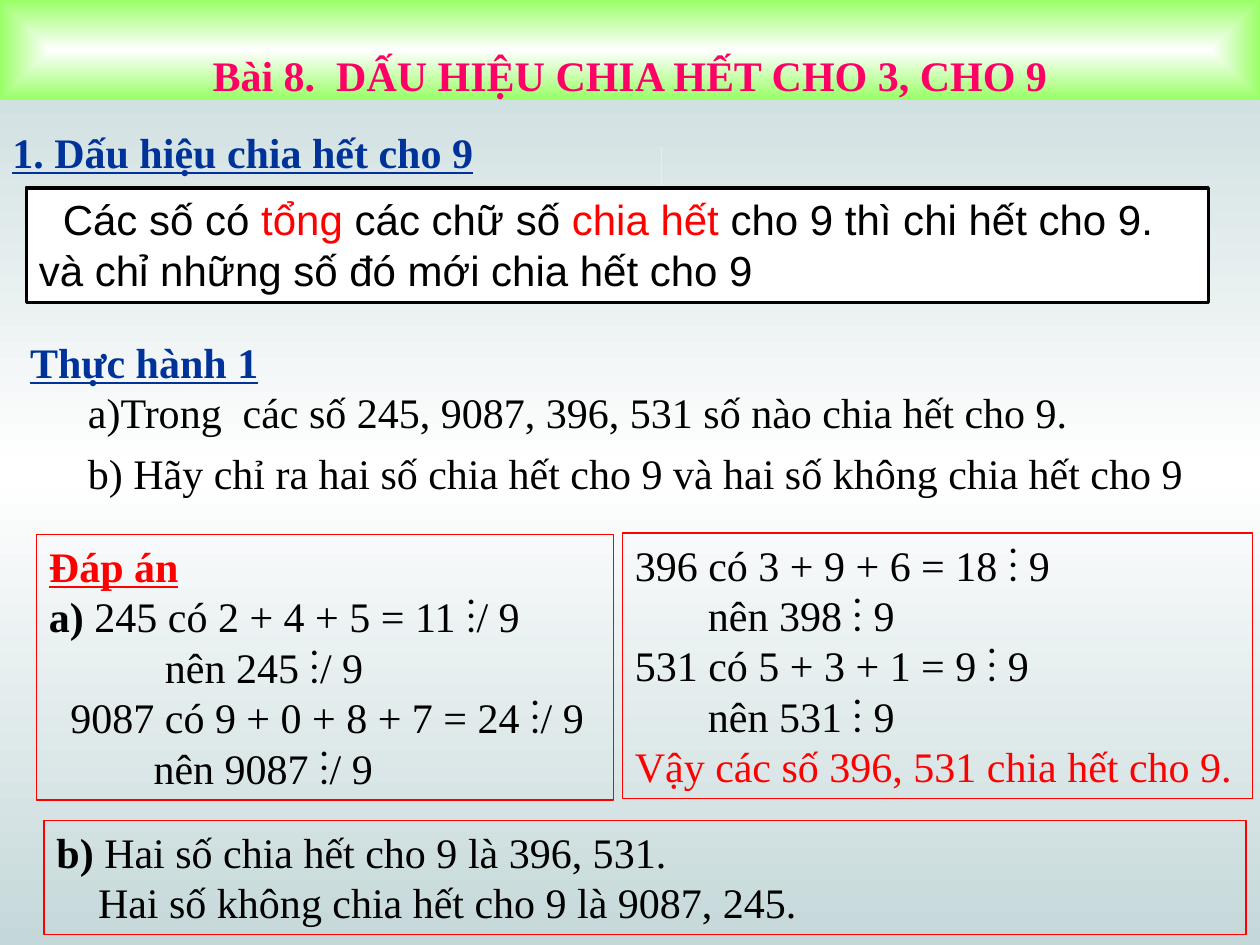
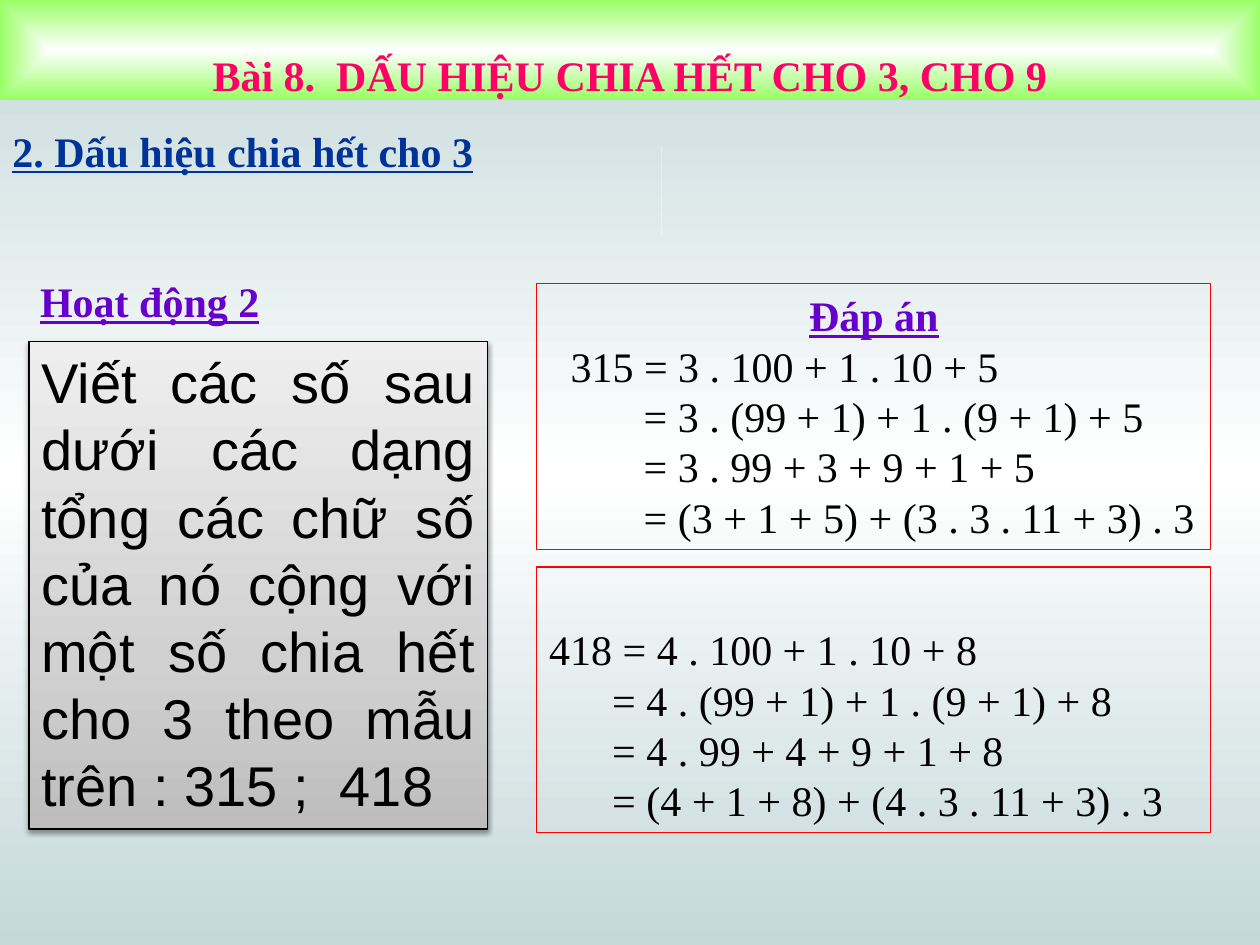
"""Build two lesson slides on divisibility by 9 and by 3."""
from dataclasses import dataclass

from lxml.etree import SubElement
from pptx import Presentation
from pptx.dml.color import RGBColor
from pptx.enum.shapes import MSO_SHAPE
from pptx.enum.text import MSO_ANCHOR, MSO_AUTO_SIZE, PP_ALIGN
from pptx.oxml.ns import qn
from pptx.util import Inches, Pt


@dataclass(frozen=True)
class Theme:
    serif: str = "Times New Roman"
    sans: str = "Arial"
    body: int = 24
    large: int = 32
    black: str = "000000"
    white: str = "FFFFFF"
    red: str = "FF0000"
    blue: str = "003399"
    purple: str = "6600CC"
    pink: str = "FF0066"
    green: str = "99FF66"
    page: tuple = ((0, "C5D8D9"), (50, "FFFFFF"), (100, "C5D8D9"))
    band: tuple = ((0, "FFFFFF"), (100, "99FF66"))
    grey: tuple = ((0, "BDBDBD"), (35, "D1D1D1"), (100, "EEEEEE"))


T = Theme()


@dataclass
class Run:
    text: str
    color: str = T.black
    bold: bool = False
    underline: bool = False


@dataclass
class Para:
    runs: list
    left: float = 0
    first: float = 0
    align: PP_ALIGN = PP_ALIGN.LEFT
    before: float = 0
    line: float = 1.0


def line(text, left=0.0, color=T.black, **kw):
    return Para([Run(text, color)], left, **kw)


def title(text, color, **kw):
    return Para([Run(text, color, True, True)], **kw)


class Deck:
    def __init__(self):
        self.prs = Presentation()
        self.prs.slide_width, self.prs.slide_height = Inches(10), Inches(7.5)
        self.s = None

    def gradient(self, fill, root, stops, angle=None):
        fill.gradient()
        grad = next(root.iter(qn("a:gradFill")))
        for child in list(grad):
            grad.remove(child)
        gs_list = SubElement(grad, qn("a:gsLst"))
        for pos, color in stops:
            gs = SubElement(gs_list, qn("a:gs"), pos=str(pos * 1000))
            SubElement(gs, qn("a:srgbClr"), val=color)
        if angle is None:
            shade = SubElement(grad, qn("a:path"), {"path": "shape"})
            SubElement(shade, qn("a:fillToRect"), dict.fromkeys("ltrb", "50000"))
        else:
            SubElement(grad, qn("a:lin"), ang=str(angle * 60000), scaled="0")

    def paragraphs(self, tf, paras, font=T.serif, size=T.body):
        for i, para in enumerate(paras):
            p = tf.paragraphs[0] if i == 0 else tf.add_paragraph()
            p.alignment, p.line_spacing = para.align, para.line
            p.space_before = Pt(para.before)
            pPr = p._p.get_or_add_pPr()
            pPr.set("marL", str(Inches(para.left)))
            pPr.set("indent", str(Inches(para.first)))
            for run in para.runs:
                r = p.add_run()
                r.text = run.text
                r.font.name, r.font.size = font, Pt(size)
                r.font.bold, r.font.underline = run.bold, run.underline
                r.font.color.rgb = RGBColor.from_string(run.color)

    def text(self, at, paras, wrap=False):
        sp = self.s.shapes.add_textbox(*map(Inches, at))
        sp.text_frame.word_wrap = wrap
        self.paragraphs(sp.text_frame, paras)

    def rect(self, at, fill=None, border=None, width=0.75):
        sp = self.s.shapes.add_shape(MSO_SHAPE.RECTANGLE, *map(Inches, at))
        sp.shadow.inherit = False
        if fill:
            sp.fill.solid()
            sp.fill.fore_color.rgb = RGBColor.from_string(fill)
        else:
            sp.fill.background()
        if border:
            sp.line.color.rgb = RGBColor.from_string(border)
            sp.line.width = Pt(width)
        else:
            sp.line.fill.background()
        return sp

    def box(self, at, paras, fill=None, border=T.red, width=0.75, top=0.05, **style):
        sp = self.rect(at, fill, border, width)
        tf = sp.text_frame
        tf.word_wrap, tf.auto_size = True, MSO_AUTO_SIZE.SHAPE_TO_FIT_TEXT
        tf.vertical_anchor, tf.margin_top = MSO_ANCHOR.TOP, Inches(top)
        self.paragraphs(tf, paras, **style)
        return sp

    def task(self, at, text):
        para = line(text, align=PP_ALIGN.JUSTIFY)
        sp = self.box(at, [para], border=T.black, font=T.sans, size=T.large)
        self.gradient(sp.fill, sp._element, T.grey, 270)
        effects = sp._element.spPr.find(qn("a:effectLst"))
        shadow = SubElement(effects, qn("a:outerShdw"), blurRad=str(Pt(3.1)),
                            dist=str(Pt(1.6)), dir="5400000", rotWithShape="0")
        color = SubElement(shadow, qn("a:srgbClr"), val=T.black)
        SubElement(color, qn("a:alpha"), val="38000")

    def slide(self, heading, top):
        self.s = self.prs.slides.add_slide(self.prs.slide_layouts[6])
        self.gradient(self.s.background.fill, self.s._element, T.page, 90)
        sp = self.rect((0, 0, 10, 0.79), border=T.green)
        self.gradient(sp.fill, sp._element, T.band)
        tf = sp.text_frame
        tf.word_wrap, tf.vertical_anchor = False, MSO_ANCHOR.BOTTOM
        tf.margin_bottom = 0
        lesson = Run("Bài 8.  DẤU HIỆU CHIA HẾT CHO 3, CHO 9", T.pink, True)
        self.paragraphs(tf, [Para([lesson], align=PP_ALIGN.CENTER)])
        for hairline in ((5.25, 1.17, 0, 0.7), (5, 3.6, 0, 0.3)):
            self.rect(hairline, T.white)
        self.text((0, top, 4.5, 0.5), [title(heading, T.blue, left=0.67, first=-0.67,
                                            before=4.8, line=0.9)], wrap=True)


def divisible_by_9(d):
    d.slide("1. Dấu hiệu chia hết cho 9", 1)
    rule = [Run("Các số có "), Run("tổng ", T.red), Run("các chữ số "),
            Run("chia hết ", T.red),
            Run("cho 9 thì chi hết cho 9. và chỉ những số đó mới chia hết cho 9")]
    d.box((0.21, 1.49, 9.38, 0.91), [Para(rule, first=0.19)], T.white, T.black, 2,
          font=T.sans)
    d.text((0.14, 2.62, 2.08, 0.5), [title("Thực hành 1", T.blue)])
    questions = ("a)Trong  các số 245, 9087, 396, 531 số nào chia hết cho 9.",
                 "b) Hãy chỉ ra hai số chia hết cho 9 và hai số không chia hết cho 9")
    d.text((0.6, 3.02, 8.97, 0.99),
           [line(q, align=PP_ALIGN.JUSTIFY, before=6) for q in questions])
    d.box((0.29, 4.24, 4.58, 2.11), [
        title("Đáp án", T.red),
        Para([Run("a)", bold=True), Run(" 245 có 2 + 4 + 5 = 11 ⋮/ 9")]),
        line("nên 245 ⋮/ 9", 0.92),
        line("9087 có 9 + 0 + 8 + 7 = 24 ⋮/ 9", 0.17),
        line("nên 9087 ⋮/ 9", 0.83)])
    d.box((4.94, 4.23, 5, 2.11), [
        line("396 có 3 + 9 + 6 = 18 ⋮ 9"),
        line("nên 398 ⋮ 9", 0.58),
        line("531 có 5 + 3 + 1 = 9 ⋮ 9"),
        line("nên 531 ⋮ 9", 0.58),
        line("Vậy các số 396, 531 chia hết cho 9.", color=T.red)])
    d.box((0.35, 6.51, 9.54, 0.91), [
        Para([Run("b) ", bold=True), Run("Hai số chia hết cho 9 là 396, 531.")]),
        line("Hai số không chia hết cho 9 là 9087, 245.", 0.33)])


def divisible_by_3(d):
    d.slide("2. Dấu hiệu chia hết cho 3", 0.99)
    d.text((0.22, 2.14, 1.94, 0.5), [title("Hoạt động 2", T.purple)])
    d.task((0.23, 2.71, 3.64, 3.87),
           "Viết các số sau dưới các dạng tổng các chữ số của nó cộng với "
           "một số chia hết cho 3 theo mẫu trên : 315 ;  418")
    d.box((4.26, 2.25, 5.35, 2.11), [
        title("Đáp án", T.purple, align=PP_ALIGN.CENTER),
        line("315 = 3 . 100 + 1 . 10 + 5", 0.17),
        *(line(step, 0.75) for step in ("= 3 . (99 + 1) + 1 . (9 + 1) + 5",
                                        "= 3 . 99 + 3 + 9 + 1 + 5",
                                        "= (3 + 1 + 5) + (3 . 3 . 11 + 3) . 3"))])
    d.box((4.26, 4.5, 5.35, 2.11), [
        line("418 = 4 . 100 + 1 . 10 + 8"),
        *(line(step, 0.5) for step in ("= 4 . (99 + 1) + 1 . (9 + 1) + 8",
                                       "= 4 . 99 + 4 + 9 + 1 + 8",
                                       "= (4 + 1 + 8) + (4 . 3 . 11 + 3) . 3"))],
          top=0.45)


def main():
    d = Deck()
    divisible_by_9(d)
    divisible_by_3(d)
    d.prs.save("out.pptx")


if __name__ == "__main__":
    main()
